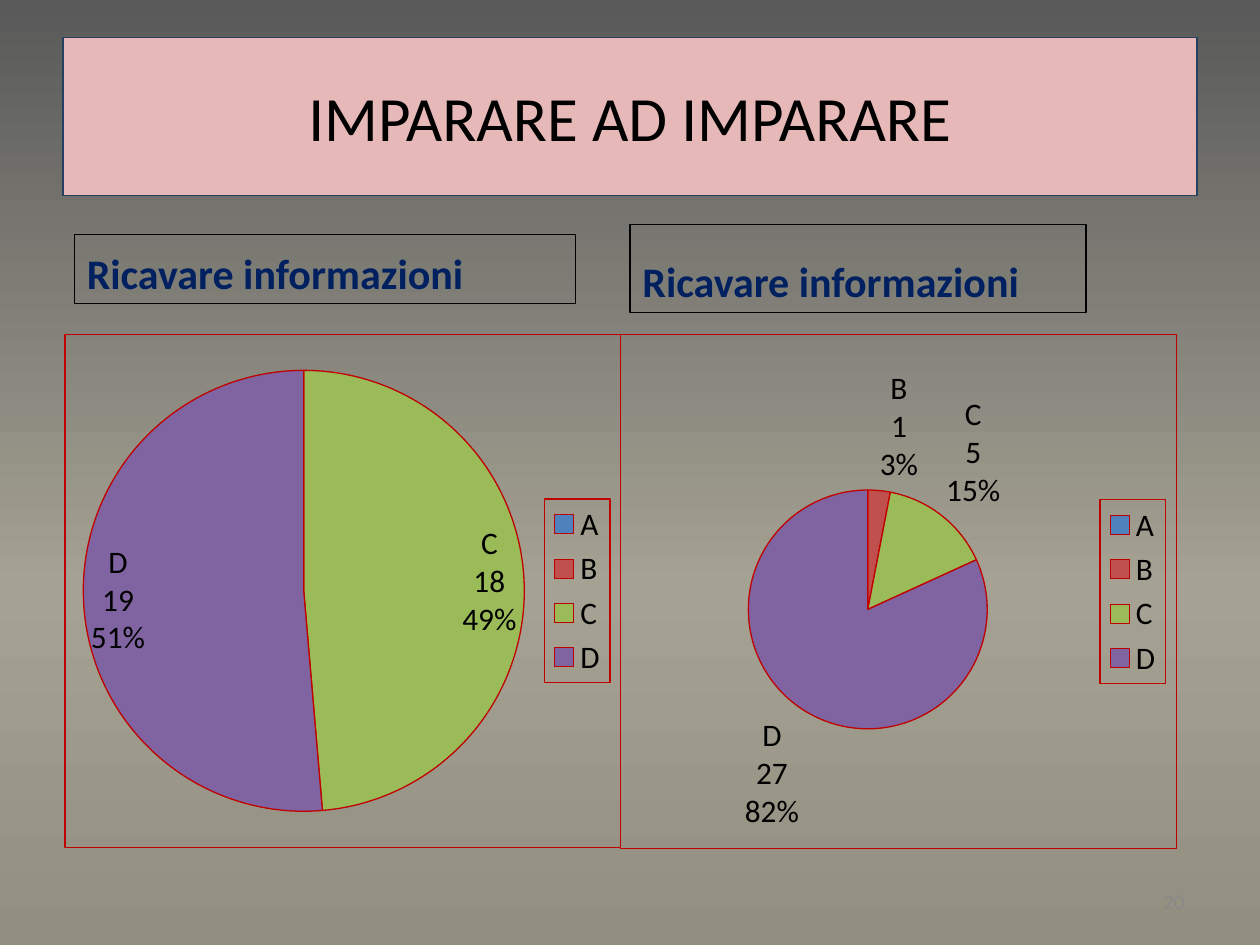
from copy import deepcopy

from lxml.etree import fromstring
from pptx import Presentation
from pptx.chart.data import CategoryChartData
from pptx.dml.color import RGBColor
from pptx.enum.chart import XL_CHART_TYPE, XL_LABEL_POSITION, XL_LEGEND_POSITION
from pptx.enum.shapes import MSO_SHAPE
from pptx.enum.text import MSO_ANCHOR, PP_ALIGN
from pptx.oxml.ns import qn
from pptx.util import Inches, Pt

FONT = "Calibri"
RED = "C00000"
NAMESPACES = ('xmlns:c="http://schemas.openxmlformats.org/drawingml/2006/chart" '
              'xmlns:a="http://schemas.openxmlformats.org/drawingml/2006/main"')
GRADES = {"A": "4F81BD", "B": "C0504D", "C": "9BBB59", "D": "8064A2"}


def color(value):
    return RGBColor.from_string(value)


def element(tag, content):
    return fromstring(f"<c:{tag} {NAMESPACES}>{content}</c:{tag}>")


def set_font(font, size, value, **extra):
    for name, setting in {"name": FONT, "size": Pt(size), **extra}.items():
        setattr(font, name, setting)
    font.color.rgb = color(value)


def set_line(line, value):
    line.color.rgb = color(value)
    line.width = Pt(0.75)


def set_background(slide, stops):
    fill = slide.background.fill
    fill.gradient()
    fill.gradient_angle = 270
    stop_list = next(slide.element.iter(qn("a:gsLst")))
    while len(stop_list) < len(stops):
        stop_list.append(deepcopy(stop_list[0]))
    for stop, (position, value) in zip(fill.gradient_stops, stops):
        stop.position = position
        stop.color.rgb = color(value)


def add_text(slide, text, place, size, value, anchor, align=PP_ALIGN.LEFT,
             fill=None, line=None, bold=False):
    box = slide.shapes.add_shape(MSO_SHAPE.RECTANGLE, *map(Inches, place))
    box.shadow.inherit = False
    if fill:
        box.fill.solid()
        box.fill.fore_color.rgb = color(fill)
    else:
        box.fill.background()
    if line:
        set_line(box.line, line)
    else:
        box.line.fill.background()
    box.text_frame.word_wrap = True
    box.text_frame.vertical_anchor = anchor
    para = box.text_frame.paragraphs[0]
    para.alignment = align
    span = para.add_run()
    span.text = text
    set_font(span.font, size, value, bold=bold)


def red_frame():
    return element("spPr", '<a:noFill/><a:ln w="9525"><a:solidFill>'
                           f'<a:srgbClr val="{RED}"/></a:solidFill></a:ln>')


def place_plot(chart, layout):
    area = next(chart.element.iter(qn("c:plotArea")))
    for old in area.findall(qn("c:layout")):
        area.remove(old)
    modes = '<c:layoutTarget val="inner"/><c:xMode val="edge"/><c:yMode val="edge"/>'
    sizes = "".join(f'<c:{key} val="{part}"/>' for key, part in zip("xywh", layout))
    area.insert(0, element("layout", f"<c:manualLayout>{modes}{sizes}</c:manualLayout>"))


def add_labels(series, values, position):
    labels = series.data_labels
    for name, setting in {"show_category_name": True, "show_value": True,
                          "show_percentage": True, "position": position}.items():
        setattr(labels, name, setting)
    set_font(labels.font, 18, "000000")
    holder = series.points[0]._element.find(qn("c:dLbls"))
    holder.find(qn("c:showBubbleSize")).addnext(element("separator", "\n"))
    # Empty grades carry no label
    empty = [index for index, value in enumerate(values) if not value]
    for order, index in enumerate(empty):
        holder.insert(order, element("dLbl", f'<c:idx val="{index}"/><c:delete val="1"/>'))


def add_pie(slide, place, values, layout, position):
    data = CategoryChartData()
    data.categories = list(GRADES)
    data.add_series("Series 1", values)
    chart = slide.shapes.add_chart(XL_CHART_TYPE.PIE, *map(Inches, place), data).chart
    chart.has_title = False
    set_font(chart.font, 18, "000000")
    chart.plots[0].vary_by_categories = True
    place_plot(chart, layout)

    # Slices
    series = chart.plots[0].series[0]
    for index, value in enumerate(GRADES.values()):
        slice_format = series.points[index].format
        slice_format.fill.solid()
        slice_format.fill.fore_color.rgb = color(value)
        set_line(slice_format.line, RED)
    add_labels(series, values, position)

    # Legend and red frames
    chart.has_legend = True
    chart.legend.position = XL_LEGEND_POSITION.RIGHT
    chart.legend.include_in_layout = False
    set_font(chart.legend.font, 18, "000000")
    chart.element.find(qn("c:chart")).addnext(red_frame())
    legend = next(chart.element.iter(qn("c:legend")))
    legend.find(qn("c:overlay")).addnext(red_frame())


def main():
    deck = Presentation()
    deck.slide_width, deck.slide_height = Inches(10), Inches(7.5)
    slide = deck.slides.add_slide(deck.slide_layouts[6])
    set_background(slide, [(0, "595959"), (0.62, "A5A293"), (1, "928F80")])

    # Title and headings
    add_text(slide, "IMPARARE AD IMPARARE", (0.5, 0.3, 9, 1.25), 36, "000000",
             MSO_ANCHOR.MIDDLE, PP_ALIGN.CENTER, fill="E6B9B8", line="254061")
    for place in ((0.59, 1.86, 3.98, 0.55), (5, 1.78, 3.62, 0.7)):
        add_text(slide, "Ricavare informazioni", place, 24, "002060",
                 MSO_ANCHOR.BOTTOM, line="000000", bold=True)

    # Pies
    add_pie(slide, (4.92, 2.65, 4.42, 4.09), (0, 1, 5, 27),
            (0.23, 0.3, 0.43, 0.47), XL_LABEL_POSITION.OUTSIDE_END)
    add_pie(slide, (0.51, 2.65, 4.42, 4.08), (0, 0, 18, 19),
            (0.03, 0.07, 0.8, 0.86), XL_LABEL_POSITION.INSIDE_END)

    # Slide number
    add_text(slide, "20", (7.17, 6.95, 2.33, 0.4), 12, "898989",
             MSO_ANCHOR.MIDDLE, PP_ALIGN.RIGHT)
    deck.save("out.pptx")


if __name__ == "__main__":
    main()
